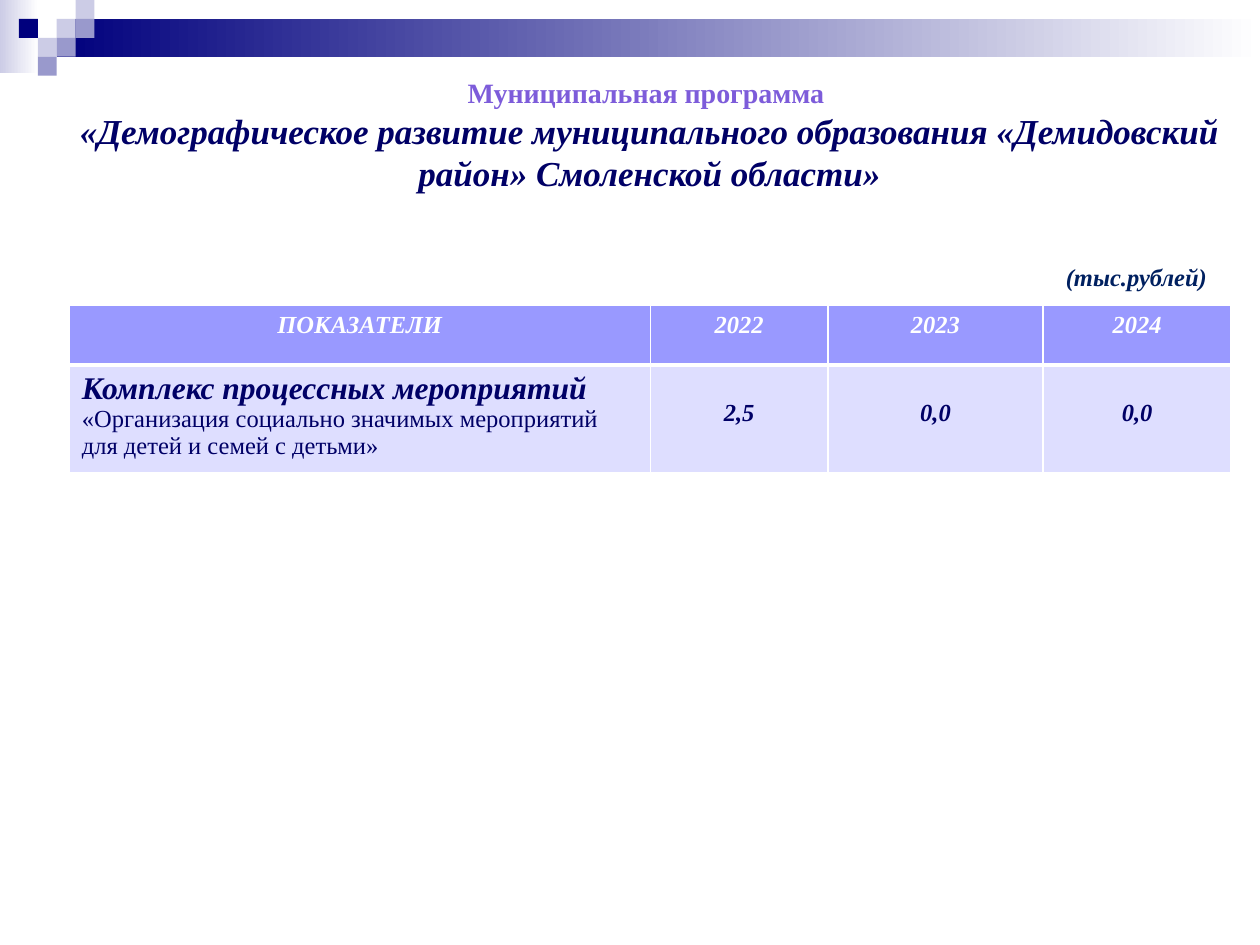
from lxml import etree
from pptx import Presentation
from pptx.dml.color import RGBColor
from pptx.enum.shapes import MSO_SHAPE
from pptx.enum.text import MSO_ANCHOR, MSO_AUTO_SIZE, PP_ALIGN
from pptx.oxml.ns import qn
from pptx.util import Pt

RECTANGLE = MSO_SHAPE.RECTANGLE
TOP = MSO_ANCHOR.TOP
NO_AUTOFIT = MSO_AUTO_SIZE.NONE
FIT_SHAPE = MSO_AUTO_SIZE.SHAPE_TO_FIT_TEXT
LEFT, CENTER = PP_ALIGN.LEFT, PP_ALIGN.CENTER

FONT = "Times New Roman"
COLORS = {
    "navy": "00007D",
    "pale": "CCCCE6",
    "lavender": "9999CC",
    "white": "FFFFFF",
    "violet": "7D5CDA",
    "ink": "000066",
    "unit": "002060",
    "header": "9999FF",
    "body": "DEDEFF",
}
SQUARE = 10.8
SQUARES = [
    (3, 1, "pale"), (4, 0, "pale"), (4, 1, "lavender"), (2, 2, "pale"),
    (1, 1, "navy"), (3, 2, "lavender"), (2, 3, "lavender"),
]
COLUMN_WIDTHS = [332, 101.5, 123, 107.5]
ROW_HEIGHTS = [34, 61.75]
HEADERS = ["ПОКАЗАТЕЛИ", "2022", "2023", "2024"]
VALUES = ["2,5", "0,0", "0,0"]


def rgb(name):
    return RGBColor.from_string(COLORS[name])


def add_text(paragraph, text, size=14, color="ink", bold=True, italic=True, align=LEFT):
    paragraph.alignment = align
    run = paragraph.add_run()
    run.text = text
    run.font.name = FONT
    run.font.size = Pt(size)
    run.font.bold = bold
    run.font.italic = italic
    run.font.color.rgb = rgb(color)


def add_rectangle(slide, box, *colors):
    shape = slide.shapes.add_shape(RECTANGLE, *map(Pt, box))
    shape.shadow.inherit = False
    shape.line.fill.background()
    if len(colors) == 1:
        shape.fill.solid()
        shape.fill.fore_color.rgb = rgb(colors[0])
    else:
        shape.fill.gradient()
        shape.fill.gradient_angle = 0
        for stop, color in zip(shape.fill.gradient_stops, colors):
            stop.color.rgb = rgb(color)


def add_banner(slide, left, top, width):
    add_rectangle(slide, (left, top, 22, 42), "pale", "white")
    bar_left = left + 3 * SQUARE
    bar = (bar_left, top + SQUARE, width - 3 * SQUARE, 2 * SQUARE)
    add_rectangle(slide, bar, "navy", "white")
    for column, row, color in SQUARES:
        box = (left + column * SQUARE, top + row * SQUARE, SQUARE, SQUARE)
        add_rectangle(slide, box, color)


def add_title(slide, left, top, width, height):
    title = slide.shapes.title
    title.left, title.top, title.width, title.height = map(Pt, (left, top, width, height))
    frame = title.text_frame
    frame.word_wrap = True
    frame.auto_size = NO_AUTOFIT
    frame.vertical_anchor = TOP
    add_text(frame.paragraphs[0], "Муниципальная программа ", size=16,
             color="violet", italic=False, align=CENTER)
    add_text(frame.add_paragraph(),
             "«Демографическое развитие муниципального образования "
             "«Демидовский район» Смоленской области»", size=20, align=CENTER)


def add_unit_label(slide, left, top, width, height):
    label = slide.shapes.add_textbox(*map(Pt, (left, top, width, height)))
    label.text_frame.word_wrap = False
    label.text_frame.auto_size = FIT_SHAPE
    add_text(label.text_frame.paragraphs[0], "(тыс.рублей)", color="unit")


def format_cell(cell, fill, bottom_width):
    cell.fill.solid()
    cell.fill.fore_color.rgb = rgb(fill)
    properties = cell._tc.get_or_add_tcPr()
    borders = [("a:lnL", 1), ("a:lnR", 1), ("a:lnT", 1), ("a:lnB", bottom_width)]
    for index, (tag, width) in enumerate(borders):
        line = etree.Element(qn(tag), w=str(Pt(width)))
        line_fill = etree.SubElement(line, qn("a:solidFill"))
        etree.SubElement(line_fill, qn("a:srgbClr"), val=COLORS["white"])
        properties.insert(index, line)


def add_indicator_table(slide, left, top):
    box = (left, top, sum(COLUMN_WIDTHS), sum(ROW_HEIGHTS))
    table = slide.shapes.add_table(2, len(HEADERS), *map(Pt, box)).table
    table.first_row = table.horz_banding = False
    for column, width in zip(table.columns, COLUMN_WIDTHS):
        column.width = Pt(width)
    for row, height in zip(table.rows, ROW_HEIGHTS):
        row.height = Pt(height)

    for index, header in enumerate(HEADERS):
        header_cell, body_cell = table.cell(0, index), table.cell(1, index)
        format_cell(header_cell, "header", 3)
        format_cell(body_cell, "body", 1)
        add_text(header_cell.text_frame.paragraphs[0], header, color="white", align=CENTER)

    paragraph = table.cell(1, 0).text_frame.paragraphs[0]
    add_text(paragraph, "Комплекс процессных мероприятий ", size=18)
    add_text(paragraph, "«Организация социально значимых мероприятий "
             "для детей и семей с детьми»", bold=False, italic=False)
    for index, value in enumerate(VALUES, start=1):
        cell = table.cell(1, index)
        cell.margin_top = Pt(19.7)
        add_text(cell.text_frame.paragraphs[0], value, align=CENTER)


def main():
    presentation = Presentation()
    presentation.slide_width, presentation.slide_height = Pt(720), Pt(540)
    slide = presentation.slides.add_slide(presentation.slide_layouts[5])
    add_banner(slide, 0, 0, 720)
    add_title(slide, 22.3, 39.6, 697.7, 75)
    add_indicator_table(slide, 39.6, 174.5)
    add_unit_label(slide, 602, 146.2, 95.8, 24.5)
    presentation.save("out.pptx")


if __name__ == "__main__":
    main()
